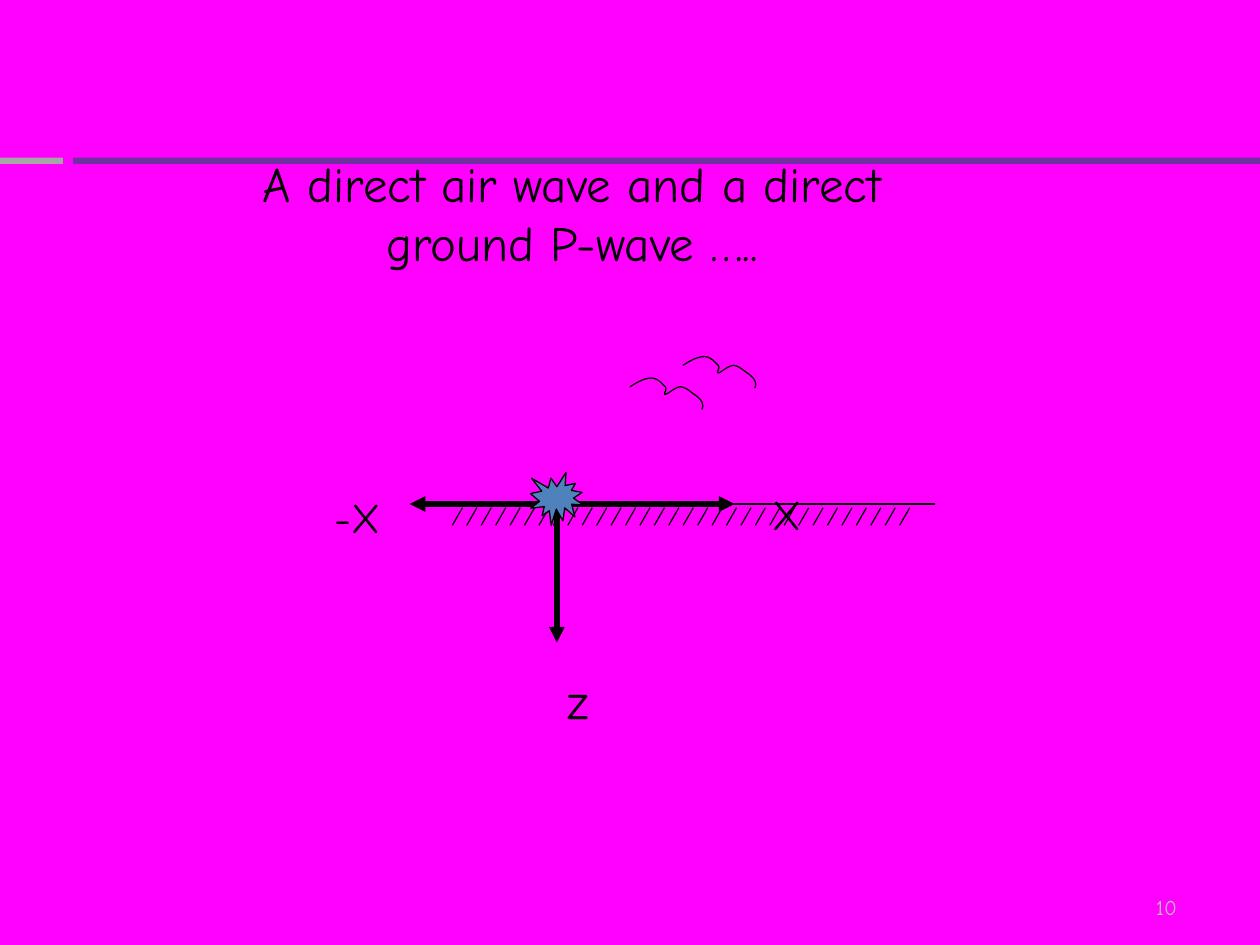
from lxml import etree
from pptx import Presentation
from pptx.dml.color import RGBColor
from pptx.enum.shapes import MSO_CONNECTOR as Conn, MSO_SHAPE as Shape
from pptx.enum.text import MSO_ANCHOR as Anchor, PP_ALIGN as Align
from pptx.oxml.ns import qn
from pptx.util import Inches, Pt

FONT = "Comic Neue"
BLACK = "000000"
THIN, THICK = 0.75, 3

# Start of a bird's outline, then its Bezier segments
START = (5.42, 2.9)
CURVES = [
    ((5.48, 2.86), (5.54, 2.83), (5.59, 2.83)),
    ((5.64, 2.83), (5.68, 2.88), (5.7, 2.9)),
    ((5.72, 2.92), (5.68, 2.96), (5.7, 2.96)),
    ((5.72, 2.96), (5.78, 2.9), (5.82, 2.9)),
    ((5.86, 2.9), (5.9, 2.94), (5.93, 2.96)),
    ((5.96, 2.98), (5.98, 3), (5.99, 3.02)),
    ((6, 3.04), (6, 3.06), (5.99, 3.08)),
]


def color(code):
    return RGBColor.from_string(code)


def stroke(item, width):
    item.line.color.rgb = color(BLACK)
    item.line.width = Pt(width)


def add_text(slide, text, x, y, w, h, size=24, ink=BLACK,
             align=Align.CENTER, anchor=Anchor.TOP, right=0.1):
    frame = slide.shapes.add_textbox(
        Inches(x), Inches(y), Inches(w), Inches(h)).text_frame
    frame.word_wrap = True
    frame.vertical_anchor = anchor
    frame.margin_right = Inches(right)
    para = frame.paragraphs[0]
    para.alignment = align
    run = para.add_run()
    run.text = text
    run.font.name = FONT
    run.font.size = Pt(size)
    run.font.color.rgb = color(ink)


def add_shape(slide, kind, x, y, w, h, fill, width=None):
    shape = slide.shapes.add_shape(
        kind, Inches(x), Inches(y), Inches(w), Inches(h))
    shape.shadow.inherit = False
    shape.fill.solid()
    shape.fill.fore_color.rgb = color(fill)
    if width:
        stroke(shape, width)
    else:
        shape.line.fill.background()


def add_line(slide, x1, y1, x2, y2, width=THIN, arrow=False):
    line = slide.shapes.add_connector(
        Conn.STRAIGHT, Inches(x1), Inches(y1), Inches(x2), Inches(y2))
    stroke(line, width)
    if arrow:
        etree.SubElement(line.line._get_or_add_ln(), qn("a:tailEnd"),
                         type="triangle")
    etree.SubElement(line._element.spPr, qn("a:effectLst"))


def trace(steps=6):
    """Return points along the bird's Bezier curves."""
    points = [START]
    for b, c, d in CURVES:
        a = points[-1]
        for i in range(1, steps + 1):
            t = i / steps
            u = 1 - t
            points.append(tuple(
                u**3 * p + 3 * u * u * t * q + 3 * u * t * t * r + t**3 * s
                for p, q, r, s in zip(a, b, c, d)))
    return points


def add_bird(slide, dx=0, dy=0):
    points = [(Inches(x + dx), Inches(y + dy)) for x, y in trace()]
    path = slide.shapes.build_freeform(*points[0])
    path.add_line_segments(points[1:], close=False)
    bird = path.convert_to_shape()
    bird.shadow.inherit = False
    bird.fill.background()
    stroke(bird, THIN)


def add_ground(slide, count=32, left=3.67, right=7.22):
    gap = (right - left) / (count - 1)
    for i in range(count):
        x = left + i * gap
        add_line(slide, x, 4.03, x - 0.08, 4.17)
    add_line(slide, 3.5, 4, 7.42, 4)


def main():
    deck = Presentation()
    deck.slide_width, deck.slide_height = Inches(10), Inches(7.5)
    slide = deck.slides.add_slide(deck.slide_layouts[6])
    back = slide.background.fill
    back.solid()
    back.fore_color.rgb = color("FF00FF")

    add_text(slide, "10", 7.17, 6.95, 2.33, 0.4, size=12, ink="BFBFBF",
             align=Align.RIGHT, anchor=Anchor.BOTTOM, right=0.16)
    add_shape(slide, Shape.RECTANGLE, 0.58, 1.25, 9.42, 0.05, "7030A0")
    add_shape(slide, Shape.RECTANGLE, 0, 1.25, 0.5, 0.05, "A6A6A6")

    for y, tip in ((4, (5.83, 4)), (4.02, (4.42, 5.1)), (4, (3.25, 4))):
        add_line(slide, 4.42, y, *tip, width=THICK, arrow=True)
    add_text(slide, "-X", 2.5, 3.85, 0.67, 0.5)
    add_text(slide, "z", 4.25, 5.27, 0.67, 0.57, size=28)
    add_text(slide, "A direct air wave and a direct ground P-wave …..",
             1.75, 1.17, 5.58, 1.03, size=28)
    add_bird(slide)
    add_bird(slide, dx=-0.42, dy=0.17)
    add_ground(slide)
    add_text(slide, "X", 5.83, 3.83, 0.83, 0.5)
    add_shape(slide, Shape.EXPLOSION1, 4.21, 3.75, 0.42, 0.42, "4F81BD", THIN)
    deck.save("out.pptx")


if __name__ == "__main__":
    main()
